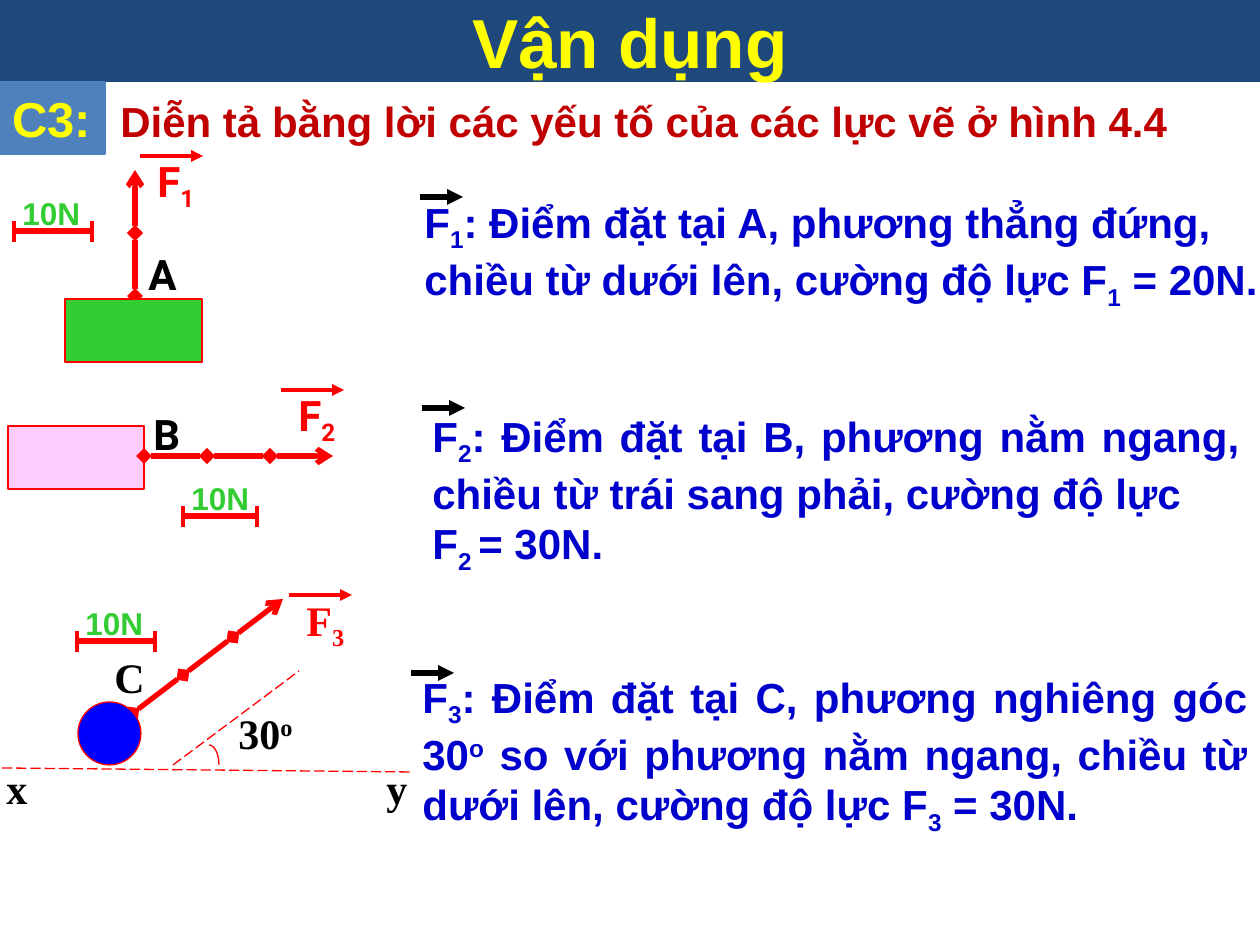
from lxml import etree
from pptx import Presentation
from pptx import util as u
from pptx.dml.color import RGBColor
from pptx.enum import dml, shapes, text
from pptx.oxml.ns import qn

SCALE = u.Inches(10) / 1260  # EMU per px

RED = RGBColor(0xFF, 0x00, 0x00)
DARK_RED = RGBColor(0xC0, 0x00, 0x00)
YELLOW = RGBColor(0xFF, 0xFF, 0x00)
BLACK = RGBColor(0x00, 0x00, 0x00)
GREEN = RGBColor(0x33, 0xCC, 0x33)
PINK = RGBColor(0xFF, 0xCC, 0xFF)
BLUE = RGBColor(0x00, 0x00, 0xFF)
TEXT_BLUE = RGBColor(0x00, 0x00, 0xCC)
NAVY = RGBColor(0x1F, 0x49, 0x7D)
TAG_BLUE = RGBColor(0x4F, 0x81, 0xBD)

SUB, SUPER = -25000, 30000
SERIF = "Times New Roman"
JUSTIFY = text.PP_ALIGN.JUSTIFY


def px(*lengths):
    return [u.Emu(round(length * SCALE)) for length in lengths]


def set_values(target, values):
    for name, value in values.items():
        setattr(target, name, value)


def write(frame, lines, color, size=24, font="Arial", align=text.PP_ALIGN.LEFT):
    """Each line is a list of plain strings and (string, baseline) pairs."""
    for index, line in enumerate(lines):
        para = frame.add_paragraph() if index else frame.paragraphs[0]
        para.alignment = align
        for part in line:
            words, baseline = part if isinstance(part, tuple) else (part, 0)
            span = para.add_run()
            span.text = words
            set_values(span.font, {"name": font, "size": u.Pt(size), "bold": True})
            span.font.color.rgb = color
            if baseline:
                span.font._element.set("baseline", str(baseline))


def add_text(page, box, lines, color, wrap=True, **style):
    frame = page.shapes.add_textbox(*px(*box)).text_frame
    set_values(frame, {"word_wrap": wrap,
                       "auto_size": text.MSO_AUTO_SIZE.SHAPE_TO_FIT_TEXT})
    write(frame, lines, color, **style)


def add_line(page, start, end, color=RED, width=3, head=None, tail=None, dash=None):
    line = page.shapes.add_connector(shapes.MSO_CONNECTOR.STRAIGHT, *px(*start, *end))
    line.line.color.rgb = color
    line.line.width = u.Pt(width)
    if dash:
        line.line.dash_style = dash
    outline = line.line._get_or_add_ln()
    for tag, kind in (("a:headEnd", head), ("a:tailEnd", tail)):
        if kind:
            etree.SubElement(outline, qn(tag), type=kind)
    etree.SubElement(line._element.spPr, qn("a:effectLst"))


def add_body(page, kind, box, fill, edge=RED):
    body = page.shapes.add_shape(kind, *px(*box))
    body.shadow.inherit = False
    if fill is None:
        body.fill.background()
    else:
        body.fill.solid()
        body.fill.fore_color.rgb = fill
    body.line.color.rgb = edge
    body.line.width = u.Pt(0.75)
    return body


def force_chain(page, start, step, count):
    """Equal 10 N segments from the point of application to the arrow tip."""
    for index in range(count):
        ends = [[a + k * d for a, d in zip(start, step)] for k in (index, index + 1)]
        add_line(page, *ends, head="diamond",
                 tail="arrow" if index == count - 1 else "diamond")


def force_label(page, left, top, number, font="Roboto"):
    add_text(page, (left, top, 68, 63), [["F", (number, SUB)]], RED,
             wrap=False, font=font)
    add_line(page, (left - 5, top + 7), (left + 58, top + 7), width=2.25, tail="triangle")


def point_label(page, left, top, width, parts, font=SERIF):
    add_text(page, (left, top, width, 63), [parts], BLACK, wrap=False, font=font)


def scale_bar(page, left, top, length=78):
    add_text(page, (left, top, 116, 50), [["10N"]], GREEN, size=18)
    first, last = left + 4, left + 4 + length
    add_line(page, (first, top + 43), (last - 2, top + 43))
    for x in (first, last):
        add_line(page, (x, top + 33), (x, top + 54), width=2.25)


def vertical_force(page, left, top):
    force_chain(page, (left + 70, top + 147), (0, -63), 2)
    add_body(page, shapes.MSO_SHAPE.RECTANGLE, (left, top + 150, 137, 63), GREEN)
    point_label(page, left + 71, top + 93, 54, ["A"], "Roboto")
    force_label(page, left + 80, top, "1")
    scale_bar(page, left - 55, top + 39)


def horizontal_force(page, left, top):
    add_body(page, shapes.MSO_SHAPE.RECTANGLE, (left, top + 43, 136, 63), PINK)
    point_label(page, left + 133, top + 19, 54, ["B"], "Roboto")
    force_label(page, left + 278, top, "2")
    force_chain(page, (left + 136, top + 73), (63, 0), 3)
    scale_bar(page, left + 171, top + 90, 74)


def inclined_force(page, left, top):
    point_label(page, left + 100, top + 57, 55, ["C"])
    force_label(page, left + 292, top, "3", SERIF)
    force_chain(page, (left + 131, top + 125), (50, -38), 3)
    add_body(page, shapes.MSO_SHAPE.OVAL, (left + 76, top + 114, 63, 63), BLUE)
    # Horizontal axis and the 30 degree direction
    for start, end in (((0, 180), (410, 184)), ((171, 177), (297, 83))):
        add_line(page, (left + start[0], top + start[1]), (left + end[0], top + end[1]),
                 width=0.75, dash=dml.MSO_LINE.LONG_DASH)
    add_body(page, shapes.MSO_SHAPE.ARC, (left + 197, top + 157, 20, 40), None)
    point_label(page, left - 8, top + 168, 57, ["x"])
    point_label(page, left + 372, top + 168, 47, ["y"])
    point_label(page, left + 224, top + 113, 82, ["30", ("o", SUPER)])
    scale_bar(page, left + 71, top + 10)


def explanation(page, box, arrow, lines):
    add_text(page, box, lines, TEXT_BLUE, align=JUSTIFY)
    x, y = box[0] + arrow[0], box[1] + arrow[1]
    add_line(page, (x, y), (x + 43, y), BLACK, tail="triangle")


def heading(page, left, top, width):
    # Title band
    title = page.shapes.title
    set_values(title, dict(zip(("left", "top", "width", "height"),
                               px(left, top, width, 82))))
    title.fill.solid()
    title.fill.fore_color.rgb = NAVY
    set_values(title.text_frame, {"vertical_anchor": text.MSO_ANCHOR.MIDDLE,
                                  "word_wrap": True,
                                  "auto_size": text.MSO_AUTO_SIZE.NONE})
    write(title.text_frame, [["Vận dụng"]], YELLOW, size=39.6,
          align=text.PP_ALIGN.CENTER)
    # Question tag and question
    tag = add_body(page, shapes.MSO_SHAPE.RECTANGLE, (left, top + 82, 105, 72),
                   TAG_BLUE, TAG_BLUE)
    tag.text_frame.vertical_anchor = text.MSO_ANCHOR.TOP
    write(tag.text_frame, [["C3:"]], YELLOW, size=28)
    add_text(page, (left + 108, top + 89, width - 108, 63),
             [["Diễn tả bằng lời các yếu tố của các lực vẽ ở hình 4.4"]],
             DARK_RED, align=JUSTIFY)


def main():
    deck = Presentation()
    deck.slide_width, deck.slide_height = px(1260, 945)
    page = deck.slides.add_slide(deck.slide_layouts[5])

    heading(page, 0, 0, 1260)
    vertical_force(page, 65, 149)
    horizontal_force(page, 8, 383)
    inclined_force(page, 2, 588)

    explanation(page, (412, 190, 901, 115), (8, 7), [
        ["F", ("1", SUB), ": Điểm đặt tại A, phương thẳng đứng, "],
        ["chiều từ dưới lên, cường độ lực F", ("1", SUB), " = 20N."]])
    explanation(page, (420, 404, 832, 165), (2, 4), [
        ["F", ("2", SUB),
         ": Điểm đặt tại B, phương nằm ngang, chiều từ trái sang phải, cường độ lực "],
        ["F", ("2 ", SUB), "= 30N."]])
    explanation(page, (410, 665, 850, 165), (1, 8), [
        ["F", ("3", SUB), ": Điểm đặt tại C, phương nghiêng góc 30", ("o", SUPER),
         " so với phương nằm ngang, chiều từ dưới lên, cường độ lực F",
         ("3", SUB), " = 30N."]])
    deck.save("out.pptx")


if __name__ == "__main__":
    main()
